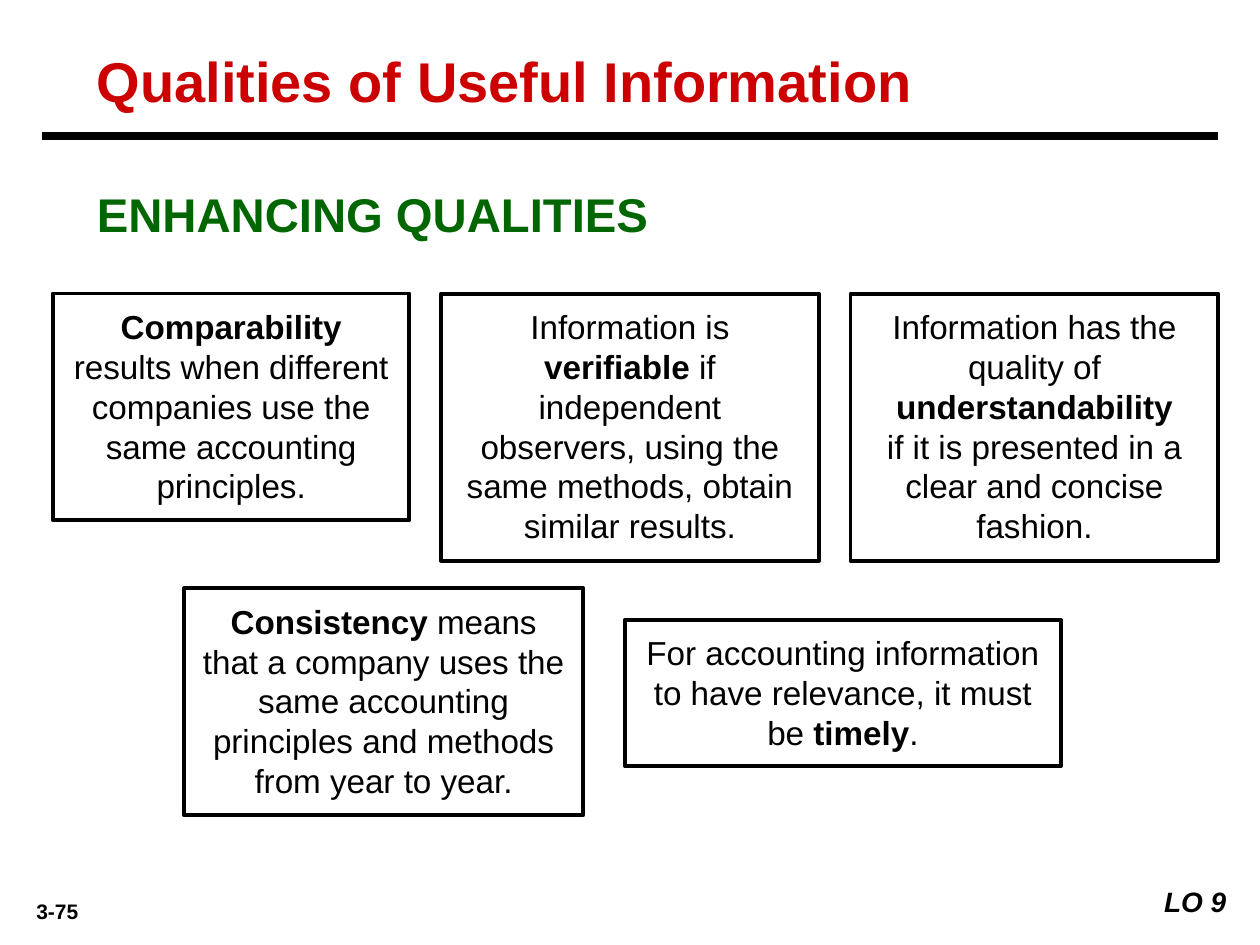
from pptx import Presentation
from pptx.dml.color import RGBColor
from pptx.enum.shapes import MSO_CONNECTOR, MSO_SHAPE
from pptx.enum.text import MSO_ANCHOR, PP_ALIGN
from pptx.oxml.ns import qn
from pptx.util import Inches, Pt
from lxml import etree

LEFT, MID, RIGHT = PP_ALIGN.LEFT, PP_ALIGN.CENTER, PP_ALIGN.RIGHT
TOP, CENTER = MSO_ANCHOR.TOP, MSO_ANCHOR.MIDDLE
RECT, LINE = MSO_SHAPE.RECTANGLE, MSO_CONNECTOR.STRAIGHT
BLACK, WHITE, RED, GREEN = "000000", "FFFFFF", "CC0000", "006600"

LABELS = [
    ("Qualities of Useful Information", (0.67, 0.33, 9, 0.61), LEFT, CENTER, RED,
     {"size": Pt(32), "bold": True}),
    ("ENHANCING QUALITIES", (0.67, 1.42, 6.12, 0.57), LEFT, TOP, GREEN,
     {"size": Pt(27), "bold": True}),
    ("3-75", (0.08, 7.08, 0.75, 0.3), MID, TOP, BLACK,
     {"size": Pt(12), "bold": True}),
    ("LO 9", (9.08, 6.97, 0.75, 0.37), RIGHT, TOP, BLACK,
     {"size": Pt(16), "bold": True, "italic": True}),
]

CARDS = [
    ((0.42, 2.33, 2.83, 1.8), [
        [("Comparability ", True),
         ("results when different companies use the same accounting principles.", False)]]),
    ((3.5, 2.33, 3, 2.12), [
        [("Information is ", False), ("verifiable", True), (" if independent", False)],
        [("observers, using the same methods, obtain similar results.", False)]]),
    ((6.75, 2.33, 2.92, 2.12), [
        [("Information has the quality of ", False), ("understandability", True)],
        [("if it is presented in a clear and concise fashion.", False)]]),
    ((1.46, 4.67, 3.17, 1.8), [
        [("Consistency", True),
         (" means that a company uses the same accounting", False)],
        [("principles and methods from year to year.", False)]]),
    ((4.96, 4.92, 3.46, 1.16), [
        [("For accounting information to have relevance, it must be ", False),
         ("timely", True), (".", False)]]),
]


def color(code):
    return RGBColor.from_string(code)


def write(par, text, code, style):
    run = par.add_run()
    run.text = text
    run.font.name = "Arial"
    run.font.color.rgb = color(code)
    for key, value in style.items():
        setattr(run.font, key, value)


def add_label(slide, text, place, align, anchor, code, style):
    frame = slide.shapes.add_textbox(*map(Inches, place)).text_frame
    frame.word_wrap = True
    frame.vertical_anchor = anchor
    par = frame.paragraphs[0]
    par.alignment = align
    write(par, text, code, style)


def add_card(slide, place, rows):
    card = slide.shapes.add_shape(RECT, *map(Inches, place))
    card.shadow.inherit = False
    card.fill.solid()
    card.fill.fore_color.rgb = color(WHITE)
    card.line.color.rgb = color(BLACK)
    card.line.width = Pt(2.25)
    frame = card.text_frame
    form = {"word_wrap": True, "vertical_anchor": TOP,
            "margin_left": Inches(0.15), "margin_right": Inches(0.15),
            "margin_top": Inches(0.1), "margin_bottom": Inches(0.1)}
    for key, value in form.items():
        setattr(frame, key, value)
    for i, row in enumerate(rows):
        par = frame.add_paragraph() if i else frame.paragraphs[0]
        par.alignment = MID
        for text, bold in row:
            write(par, text, BLACK, {"size": Pt(19), "bold": bold})


def add_rule(slide, left, right, y):
    rule = slide.shapes.add_connector(LINE, *map(Inches, (left, y, right, y)))
    rule.line.color.rgb = color(BLACK)
    rule.line.width = Pt(4.5)
    etree.SubElement(rule.element.spPr, qn("a:effectLst"))


def main():
    deck = Presentation()
    deck.slide_width, deck.slide_height = Inches(10), Inches(7.5)
    slide = deck.slides.add_slide(deck.slide_layouts[6])
    add_rule(slide, 0.33, 9.67, 1.08)
    for label in LABELS:
        add_label(slide, *label)
    for card in CARDS:
        add_card(slide, *card)
    deck.save("out.pptx")


if __name__ == "__main__":
    main()
